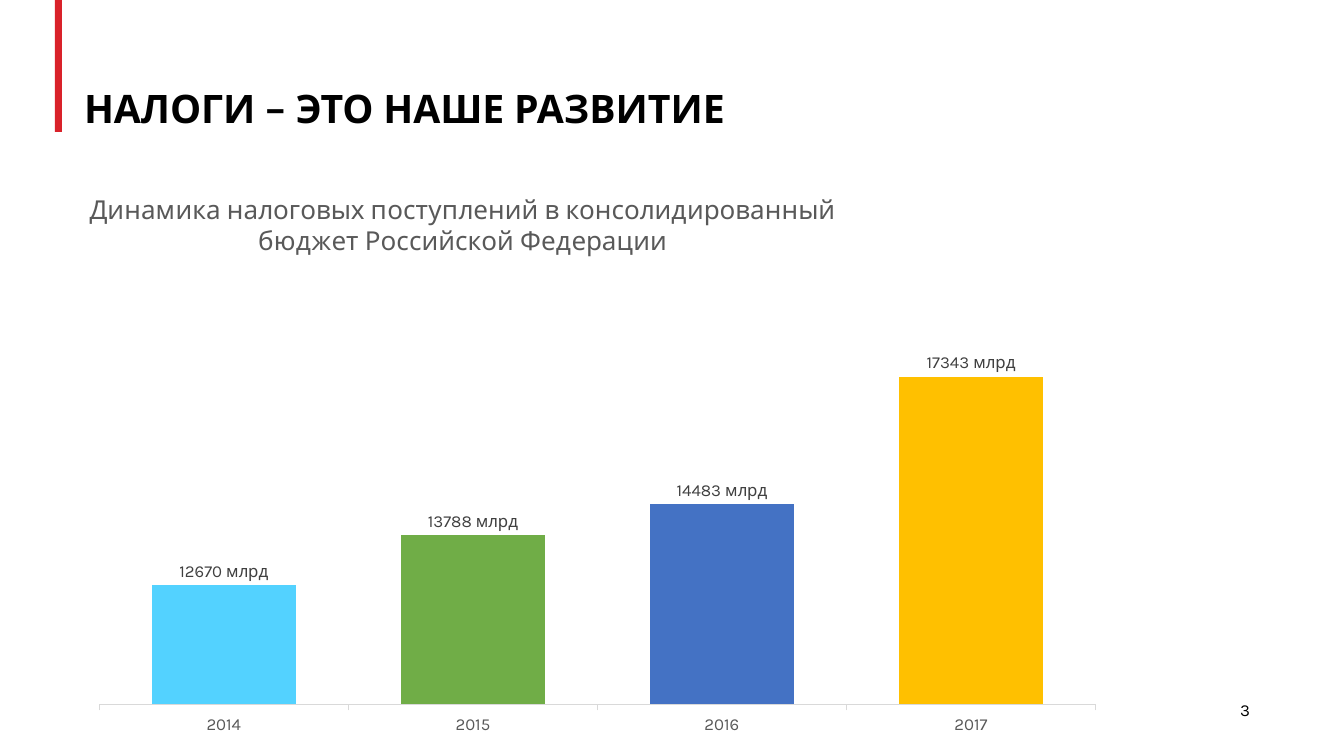
import dataclasses

import lxml.etree
import pptx
import pptx.chart.data
import pptx.dml.color
import pptx.enum.chart
import pptx.enum.shapes
import pptx.enum.text
import pptx.oxml.ns
import pptx.util

EMU_PER_PX = 914400 / 100.8


@dataclasses.dataclass(frozen=True)
class Theme:
    font: str = "Karla"
    black: str = "000000"
    red: str = "D9222A"
    chart_text: str = "595959"
    label_text: str = "404040"
    axis_line: str = "D9D9D9"
    bar: str = "4472C4"
    title_size: float = 28
    chart_title_size: float = 18.6
    small_size: float = 12


THEME = Theme()

# Year, plotted value, label, bar colour
REVENUES = [
    ("2014", 2670, "12670 млрд", "53D2FF"),
    ("2015", 3788, "13788 млрд", "70AD47"),
    ("2016", 4483, "14483 млрд", THEME.bar),
    ("2017", 7343, "17343 млрд", "FFC000"),
]


def px(length):
    return pptx.util.Emu(round(length * EMU_PER_PX))


def rgb(colour):
    return pptx.dml.color.RGBColor.from_string(colour)


def style_font(font, size, colour, bold=False):
    font.name = THEME.font
    font.size = pptx.util.Pt(size)
    font.bold = bold
    font.color.rgb = rgb(colour)


def fill_solid(fill, colour):
    fill.solid()
    fill.fore_color.rgb = rgb(colour)


def add_run(paragraph, text, size, colour, bold=False):
    run = paragraph.add_run()
    run.text = text
    style_font(run.font, size, colour, bold)


def add_accent_bar(slide, left, top, width, height):
    bar = slide.shapes.add_shape(
        pptx.enum.shapes.MSO_SHAPE.RECTANGLE, px(left), px(top), px(width), px(height))
    bar.shadow.inherit = False
    fill_solid(bar.fill, THEME.red)
    bar.line.fill.background()


def set_title(slide, text, left, top, width, height):
    title = slide.shapes.title
    title.left, title.top, title.width, title.height = map(px, (left, top, width, height))
    frame = title.text_frame
    frame.word_wrap = True
    frame.auto_size = pptx.enum.text.MSO_AUTO_SIZE.NONE
    frame.vertical_anchor = pptx.enum.text.MSO_ANCHOR.MIDDLE
    frame.margin_left = frame.margin_right = px(8)
    frame.margin_top = frame.margin_bottom = px(4)
    paragraph = frame.paragraphs[0]
    paragraph.alignment = pptx.enum.text.PP_ALIGN.LEFT
    add_run(paragraph, text, THEME.title_size, THEME.black, bold=True)


def add_page_number(slide, text, left, top, width, height):
    box = slide.shapes.add_textbox(px(left), px(top), px(width), px(height))
    box.text_frame.word_wrap = True
    paragraph = box.text_frame.paragraphs[0]
    paragraph.alignment = pptx.enum.text.PP_ALIGN.RIGHT
    add_run(paragraph, text, THEME.small_size, THEME.black)


def set_manual_layout(element, index, settings):
    """Place a chart part by fractions of the chart area."""
    name = pptx.oxml.ns.qn
    for old_layout in element.findall(name("c:layout")):
        element.remove(old_layout)
    layout = lxml.etree.Element(name("c:layout"))
    manual = lxml.etree.SubElement(layout, name("c:manualLayout"))
    for key, value in settings.items():
        lxml.etree.SubElement(manual, name(f"c:{key}")).set("val", str(value))
    element.insert(index, layout)


def format_axes(chart):
    category_axis = chart.category_axis
    category_axis.has_major_gridlines = False
    category_axis.major_tick_mark = pptx.enum.chart.XL_TICK_MARK.OUTSIDE
    category_axis.format.line.color.rgb = rgb(THEME.axis_line)
    category_axis.format.line.width = pptx.util.Pt(0.75)
    style_font(category_axis.tick_labels.font, THEME.small_size, THEME.chart_text)

    value_axis = chart.value_axis
    value_axis.minimum_scale = 0
    value_axis.maximum_scale = value_axis.major_unit = 10000
    value_axis.has_major_gridlines = False
    value_axis.visible = False


def format_bars(plot):
    plot.gap_width = 73
    plot.overlap = 3
    plot.vary_by_categories = False
    series = plot.series[0]
    fill_solid(series.format.fill, THEME.bar)
    labels = series.data_labels
    labels.show_value = True
    labels.position = pptx.enum.chart.XL_LABEL_POSITION.OUTSIDE_END
    style_font(labels.font, THEME.small_size, THEME.label_text)
    for index, (_, _, text, colour) in enumerate(REVENUES):
        point = series.points[index]
        fill_solid(point.format.fill, colour)
        label = point.data_label
        add_run(label.text_frame.paragraphs[0], text, THEME.small_size, THEME.label_text)
        label.position = pptx.enum.chart.XL_LABEL_POSITION.OUTSIDE_END


def add_revenue_chart(slide, title, left, top, width, height):
    data = pptx.chart.data.CategoryChartData()
    data.categories = [year for year, *_ in REVENUES]
    data.add_series("Series 1", [value for _, value, *_ in REVENUES])
    chart = slide.shapes.add_chart(
        pptx.enum.chart.XL_CHART_TYPE.COLUMN_CLUSTERED,
        px(left), px(top), px(width), px(height), data).chart
    style_font(chart.font, 10, THEME.black)
    chart.has_legend = False

    # Chart title
    chart.has_title = True
    paragraph = chart.chart_title.text_frame.paragraphs[0]
    paragraph.alignment = pptx.enum.text.PP_ALIGN.CENTER
    add_run(paragraph, title, THEME.chart_title_size, THEME.chart_text)
    title_element = chart.chart_title._element
    set_manual_layout(title_element, 1, {"xMode": "edge", "yMode": "edge", "x": 0, "y": 0.03})

    # Plot area
    plot_area = chart._chartSpace.chart.plotArea
    set_manual_layout(plot_area, 0, {
        "layoutTarget": "inner", "xMode": "edge", "yMode": "edge",
        "x": 0.014, "y": 0.151, "w": 0.97, "h": 0.761})
    format_axes(chart)
    format_bars(chart.plots[0])


def main():
    presentation = pptx.Presentation()
    presentation.slide_width = px(1344)
    presentation.slide_height = px(756)
    slide = presentation.slides.add_slide(presentation.slide_layouts.get_by_name("Title Only"))

    add_accent_bar(slide, 55, 0, 7, 132)
    add_page_number(slide, "3", 1145, 695, 115, 30)
    set_title(slide, "НАЛОГИ – ЭТО НАШЕ РАЗВИТИЕ", 76, 82, 842, 52)
    add_revenue_chart(
        slide,
        "Динамика налоговых поступлений в консолидированный бюджет Российской Федерации",
        85, 170, 1027, 586)
    presentation.save("out.pptx")


if __name__ == "__main__":
    main()
